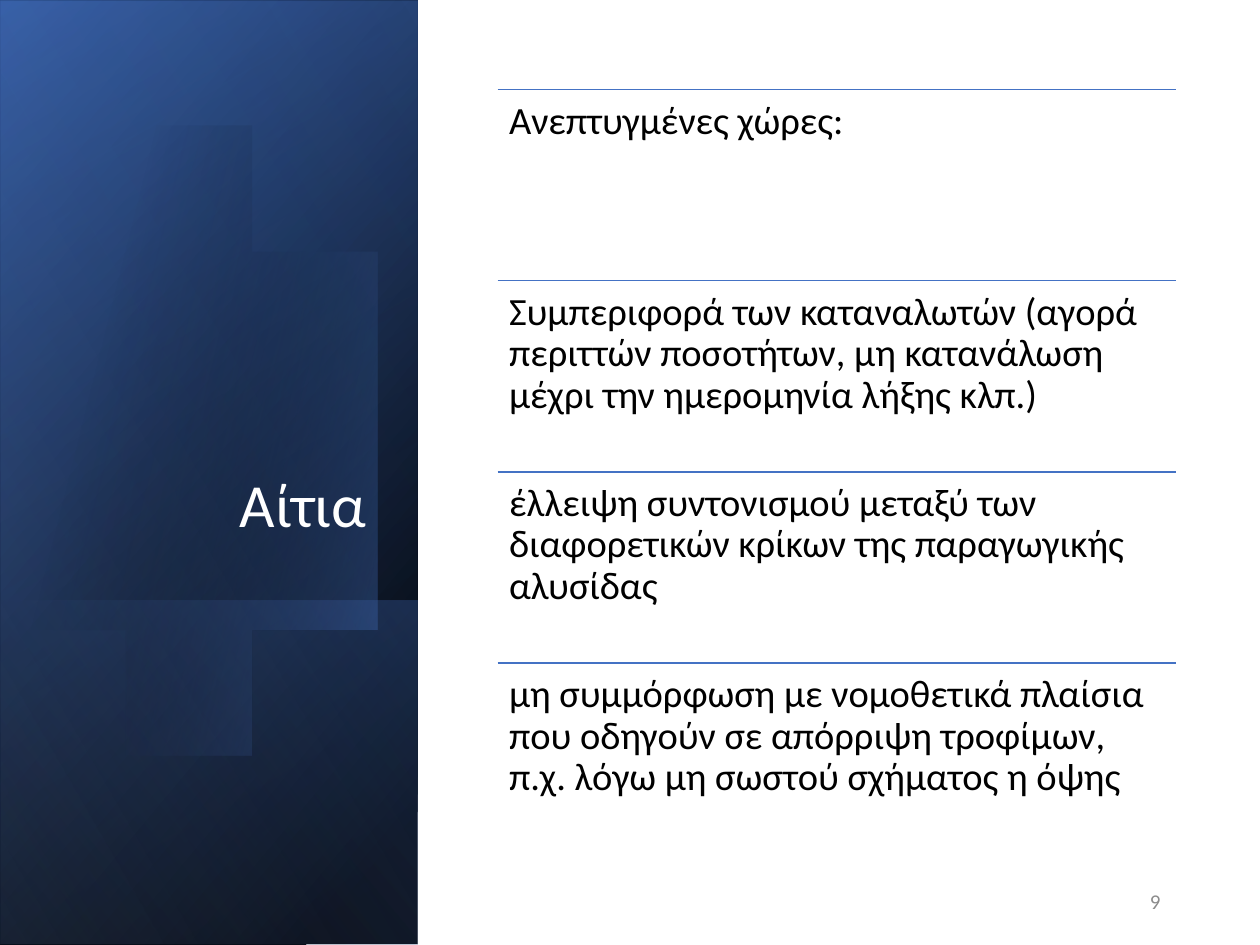
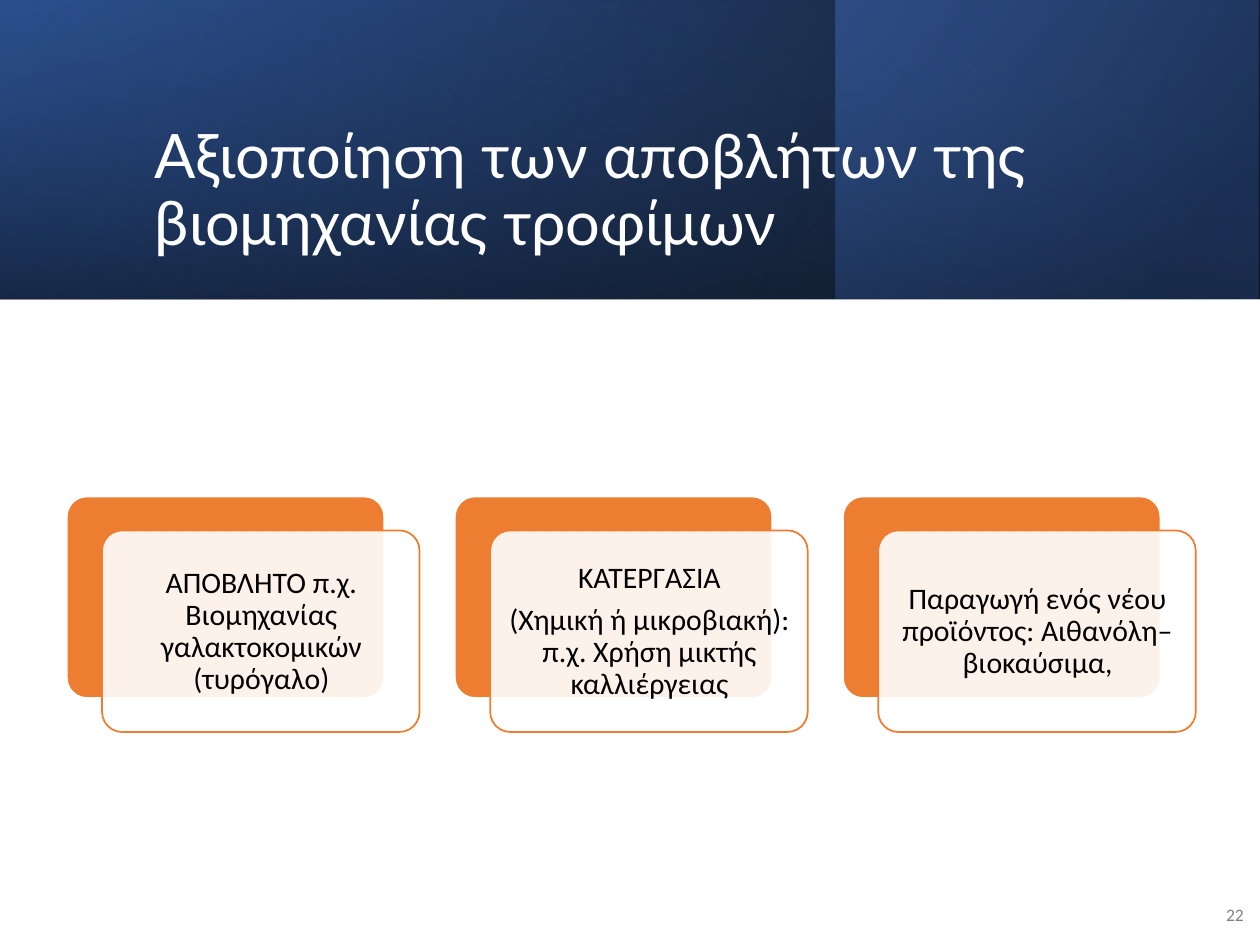
from lxml.etree import SubElement
from pptx import Presentation
from pptx.dml.color import RGBColor
from pptx.enum.shapes import MSO_CONNECTOR as Connector, MSO_SHAPE as Preset
from pptx.enum.text import MSO_ANCHOR as Anchor, MSO_AUTO_SIZE as AutoSize, PP_ALIGN as Align
from pptx.oxml.ns import qn
from pptx.util import Inches, Pt

# Shared look
WHITE, BLACK = "FFFFFF", "000000"
BLUE, DARK_BLUE, PALE_BLUE, NAVY = "4472C4", "2F5597", "8FAADC", "203864"
ORANGE = "ED7D31"
BODY_FONT = "Calibri"
TITLE_SIZE = 35
TITLE_ONLY = 5

CAUSES = [
    "Ανεπτυγμένες χώρες:",
    "Συμπεριφορά των καταναλωτών (αγορά περιττών ποσοτήτων, μη κατανάλωση "
    "μέχρι την ημερομηνία λήξης κλπ.)",
    "έλλειψη συντονισμού μεταξύ των διαφορετικών κρίκων της παραγωγικής αλυσίδας",
    "μη συμμόρφωση με νομοθετικά πλαίσια που οδηγούν σε απόρριψη τροφίμων, "
    "π.χ. λόγω μη σωστού σχήματος η όψης",
]
STEPS = [
    ["ΑΠΟΒΛΗΤΟ π.χ. Βιομηχανίας γαλακτοκομικών (τυρόγαλο)"],
    ["ΚΑΤΕΡΓΑΣΙΑ", "(Χημική ή μικροβιακή): π.χ. Χρήση μικτής καλλιέργειας"],
    ["Παραγωγή ενός νέου προϊόντος: Aιθανόλη–βιοκαύσιμα,"],
]

# Gradient bands: box, rotation, angle, stops of (position, colour, opacity)
SIDE_BANDS = [
    ((-2.09, 2.09, 7.5, 3.31), 90, 50, [(8, BLACK, 100), (100, DARK_BLUE, 100)]),
    ((-2.09, 2.11, 7.5, 3.31), 90, 30, [(0, BLACK, 0), (99, BLUE, 46)]),
    ((0.29, 4.48, 2.74, 3.31), 90, 130, [(2, BLUE, 29), (100, BLACK, 30)]),
]
SIDE_GLOW = ((-2.09, 2.08, 7.5, 3.31), 90, 120, [(0, BLACK, 0), (99, PALE_BLUE, 11)])
TOP_BANDS = [
    ((0, 0, 10, 2.37), 0, 330, [(0, BLACK, 96), (100, DARK_BLUE, 100)]),
    ((6.63, 0, 3.36, 2.37), 0, 320, [(19, NAVY, 68), (100, BLUE, 48)]),
    ((3.81, -3.81, 2.37, 10), 270, 350, [(23, DARK_BLUE, 16), (99, BLACK, 45)]),
]

# Blob outline: a start point, then Bézier segments (three points) or lines (one)
BLOB_START = (0.96, 1.14)
BLOB_SEGMENTS = [
    [(1.71, 1.22), (2.44, 1.92), (2.73, 2.9)],
    [(3.07, 4.12), (2.62, 5.31), (1.71, 5.57)],
    [(1.14, 5.74), (0.53, 5.5), (0.07, 5)],
    [(-0.03, 4.88)],
    [(-0.25, 1.66)],
    [(-0.15, 1.54)],
    [(0.02, 1.37), (0.22, 1.25), (0.45, 1.18)],
    [(0.62, 1.13), (0.79, 1.12), (0.96, 1.14)],
]


def color(value):
    return RGBColor.from_string(value)


def inches(box):
    return [Inches(value) for value in box]


def set_opacity(color_element, percent):
    if percent < 100:
        SubElement(color_element, qn("a:alpha"), val=str(percent * 1000))


def fill_gradient(shape, angle, stops):
    shape.shadow.inherit = False
    shape.line.fill.background()
    shape.fill.background()
    properties = shape.element.spPr
    empty_fill = properties.find(qn("a:noFill"))
    gradient = SubElement(properties, qn("a:gradFill"), rotWithShape="1")
    properties.replace(empty_fill, gradient)
    stop_list = SubElement(gradient, qn("a:gsLst"))
    for position, value, opacity in stops:
        stop = SubElement(stop_list, qn("a:gs"), pos=str(position * 1000))
        set_opacity(SubElement(stop, qn("a:srgbClr"), val=value), opacity)
    SubElement(gradient, qn("a:lin"), ang=str(angle * 60000), scaled="0")


def add_band(slide, box, rotation, angle, stops):
    shape = slide.shapes.add_shape(Preset.RECTANGLE, *inches(box))
    shape.rotation = rotation
    shape.element.spPr.find(qn("a:xfrm")).set("flipH", "1")
    fill_gradient(shape, angle, stops)


def bezier(points, steps=16):
    for step in range(1, steps + 1):
        t = step / steps
        weights = ((1 - t) ** 3, 3 * t * (1 - t) ** 2, 3 * t * t * (1 - t), t ** 3)
        yield tuple(sum(w * point[axis] for w, point in zip(weights, points))
                    for axis in (0, 1))


def add_blob(slide):
    outline = [BLOB_START]
    for segment in BLOB_SEGMENTS:
        outline.extend(bezier([outline[-1], *segment]) if len(segment) == 3 else segment)
    builder = slide.shapes.build_freeform(*outline[0], scale=Inches(1))
    builder.add_line_segments(outline[1:], close=True)
    fill_gradient(builder.convert_to_shape(), 14, [(29, BLACK, 0), (100, BLUE, 43)])


def write_text(frame, paragraphs, size, value=BLACK, font=BODY_FONT, anchor=Anchor.TOP,
               align=Align.LEFT, spacing=0.9, after=0, inset=None):
    frame_format = {"word_wrap": True, "auto_size": AutoSize.NONE, "vertical_anchor": anchor}
    if inset is not None:
        for side in ("left", "top", "right", "bottom"):
            frame_format[f"margin_{side}"] = Inches(inset)
    for name, setting in frame_format.items():
        setattr(frame, name, setting)
    for index, text in enumerate(paragraphs):
        paragraph = frame.add_paragraph() if index else frame.paragraphs[0]
        paragraph.text = text
        paragraph_format = {"alignment": align, "line_spacing": spacing,
                            "space_before": Pt(0), "space_after": Pt(after)}
        for name, setting in paragraph_format.items():
            setattr(paragraph, name, setting)
        for name, setting in {"name": font, "size": Pt(size)}.items():
            setattr(paragraph.font, name, setting)
        paragraph.font.color.rgb = color(value)


def add_text(slide, box, paragraphs, size, **options):
    text_box = slide.shapes.add_textbox(*inches(box))
    write_text(text_box.text_frame, paragraphs, size, **options)


def set_title(slide, box, text, **options):
    title = slide.shapes.title
    title.left, title.top, title.width, title.height = inches(box)
    write_text(title.text_frame, [text], TITLE_SIZE, value=WHITE,
               anchor=Anchor.BOTTOM, **options)
    # Bring the title in front of the bands
    title.element.getparent().append(title.element)


def add_page_number(slide, box, number, size, value):
    add_text(slide, box, [number], size, value=value, anchor=Anchor.MIDDLE,
             align=Align.RIGHT, spacing=1)


def add_rule(slide, left, top, width):
    rule = slide.shapes.add_connector(
        Connector.STRAIGHT, *inches((left, top, left + width, top)))
    rule.line.color.rgb = color(BLUE)
    rule.line.width = Pt(1)
    SubElement(rule.element.spPr, qn("a:effectLst"))


def add_card(slide, box, fill, line, opacity=100):
    card = slide.shapes.add_shape(Preset.ROUNDED_RECTANGLE, *inches(box))
    card.adjustments[0] = 0.1
    card.shadow.inherit = False
    card.fill.solid()
    card.fill.fore_color.rgb = color(fill)
    set_opacity(card.element.spPr.find(qn("a:solidFill"))[0], opacity)
    card.line.color.rgb = color(line)
    card.line.width = Pt(1)


def add_step(slide, left, paragraphs):
    add_card(slide, (left, 3.94, 2.52, 1.6), ORANGE, WHITE)
    add_card(slide, (left + 0.28, 4.21, 2.52, 1.6), WHITE, ORANGE, opacity=90)
    add_text(slide, (left + 0.33, 4.26, 2.43, 1.51), paragraphs, 17,
             anchor=Anchor.MIDDLE, align=Align.CENTER, after=6, inset=0.07)


def build_causes(slide):
    # Side panel
    for band in SIDE_BANDS:
        add_band(slide, *band)
    add_blob(slide)
    add_band(slide, *SIDE_GLOW)
    set_title(slide, (0.38, 0.64, 2.63, 3.7), "Αίτια", font=BODY_FONT, align=Align.RIGHT)
    # Ruled list
    left, top, width, row_height = 3.95, 0.71, 5.38, 1.517
    for row, cause in enumerate(CAUSES):
        row_top = top + row * row_height
        add_rule(slide, left, row_top, width)
        add_text(slide, (left, row_top, width, row_height), [cause], 22, inset=0.09)
    add_page_number(slide, (7.06, 6.95, 2.25, 0.4), "9", 12, "8C8C8C")


def build_valorisation(slide):
    # Top banner
    for band in TOP_BANDS:
        add_band(slide, *band)
    set_title(slide, (1.13, 0.38, 7.97, 1.72),
              "Αξιοποίηση των αποβλήτων της βιομηχανίας τροφίμων", font="Lato")
    add_page_number(slide, (9.6, 7.06, 0.37, 0.4), "22", 10, "808080")
    # Process steps
    for column, paragraphs in enumerate(STEPS):
        add_step(slide, 0.53 + column * 3.08, paragraphs)


def main():
    presentation = Presentation()
    presentation.slide_width, presentation.slide_height = Inches(10), Inches(7.5)
    layout = presentation.slide_layouts[TITLE_ONLY]
    for build in (build_causes, build_valorisation):
        build(presentation.slides.add_slide(layout))
    presentation.save("out.pptx")


if __name__ == "__main__":
    main()
